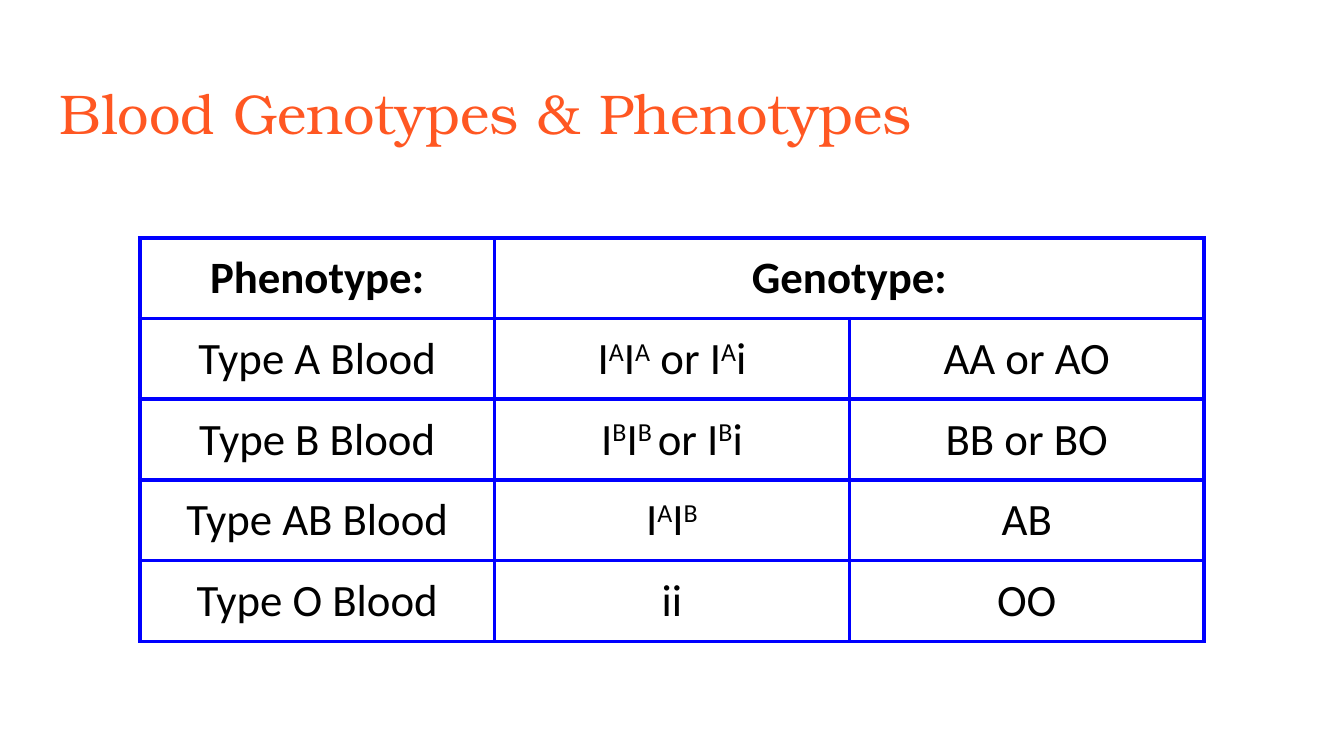
from dataclasses import dataclass

from lxml.etree import SubElement
from pptx import Presentation
from pptx.dml.color import RGBColor
from pptx.enum.text import MSO_ANCHOR, PP_ALIGN
from pptx.oxml.ns import qn
from pptx.util import Emu, Pt

EMU_PER_PX = 4572  # 200 px to the inch
ORANGE = RGBColor(0xFF, 0x57, 0x22)
BLUE = RGBColor(0x00, 0x00, 0xFF)
BLACK = RGBColor(0x00, 0x00, 0x00)
INSET = 20
COLUMN_WIDTH = 528
MIN_ROW_HEIGHT = 84
TABLE_HEIGHT = 600
SUPERSCRIPT = "30000"


@dataclass(frozen=True)
class BloodType:
    phenotype: str
    alleles: str  # text between a pair of ^ is superscript
    letters: str


BLOOD_TYPES = [
    BloodType("Type A Blood", "I^A^I^A^ or I^A^i", "AA or AO"),
    BloodType("Type B Blood", "I^B^I^B ^or I^B^i", "BB or BO"),
    BloodType("Type AB Blood", "I^A^I^B^", "AB"),
    BloodType("Type O Blood", "ii", "OO"),
]


def px(value: int) -> Emu:
    return Emu(value * EMU_PER_PX)


def set_margins(target) -> None:
    target.margin_left = target.margin_right = px(INSET)
    target.margin_top = target.margin_bottom = px(INSET)


def add_title(s, text: str) -> None:
    tf = s.shapes.add_textbox(px(69), px(97), px(1864), px(126)).text_frame
    tf.word_wrap = True
    set_margins(tf)
    tf.text = text
    font = tf.paragraphs[0].runs[0].font
    font.name, font.size = "TeX Gyre Bonum", Pt(30)
    font.color.rgb = ORANGE


def add_borders(cell) -> None:
    tcPr = cell._tc.get_or_add_tcPr()
    for i, side in enumerate(("lnL", "lnR", "lnT", "lnB")):
        ln = SubElement(tcPr, qn(f"a:{side}"), w=str(Pt(2.25)))
        fill = SubElement(ln, qn("a:solidFill"))
        SubElement(fill, qn("a:srgbClr"), val=str(BLUE))
        tcPr.remove(ln)
        tcPr.insert(i, ln)  # borders come before the cell fill


def style_cell(cell) -> None:
    cell.fill.background()
    cell.vertical_anchor = MSO_ANCHOR.TOP
    set_margins(cell)
    add_borders(cell)


def write_cell(cell, text: str, bold: bool = False) -> None:
    p = cell.text_frame.paragraphs[0]
    p.alignment = PP_ALIGN.CENTER
    for i, part in enumerate(text.split("^")):
        if not part:
            continue
        r = p.add_run()
        r.text = part
        r.font.name, r.font.size, r.font.bold = "Calibri", Pt(24), bold
        r.font.color.rgb = BLACK
        if i % 2:
            r.font._element.set("baseline", SUPERSCRIPT)


def add_blood_table(s, blood_types: list[BloodType]) -> None:
    frame = s.shapes.add_table(len(blood_types) + 1, 3, px(208), px(354),
                               px(3 * COLUMN_WIDTH), px(TABLE_HEIGHT))
    table = frame.table
    table.first_row = table.horz_banding = False
    for column in table.columns:
        column.width = px(COLUMN_WIDTH)
    for row in table.rows:
        row.height = px(MIN_ROW_HEIGHT)
    frame.height = px(TABLE_HEIGHT)  # the rows grow to fit their text
    for cell in table.iter_cells():
        style_cell(cell)

    table.cell(0, 1).merge(table.cell(0, 2))
    for column, heading in enumerate(("Phenotype:", "Genotype:")):
        write_cell(table.cell(0, column), heading, bold=True)
    for row, blood in enumerate(blood_types, start=1):
        for column, text in enumerate((blood.phenotype, blood.alleles, blood.letters)):
            write_cell(table.cell(row, column), text)


def main() -> None:
    prs = Presentation()
    prs.slide_width, prs.slide_height = px(2000), px(1125)
    s = prs.slides.add_slide(prs.slide_layouts[6])
    add_title(s, "Blood Genotypes & Phenotypes")
    add_blood_table(s, BLOOD_TYPES)
    prs.save("out.pptx")


if __name__ == "__main__":
    main()
